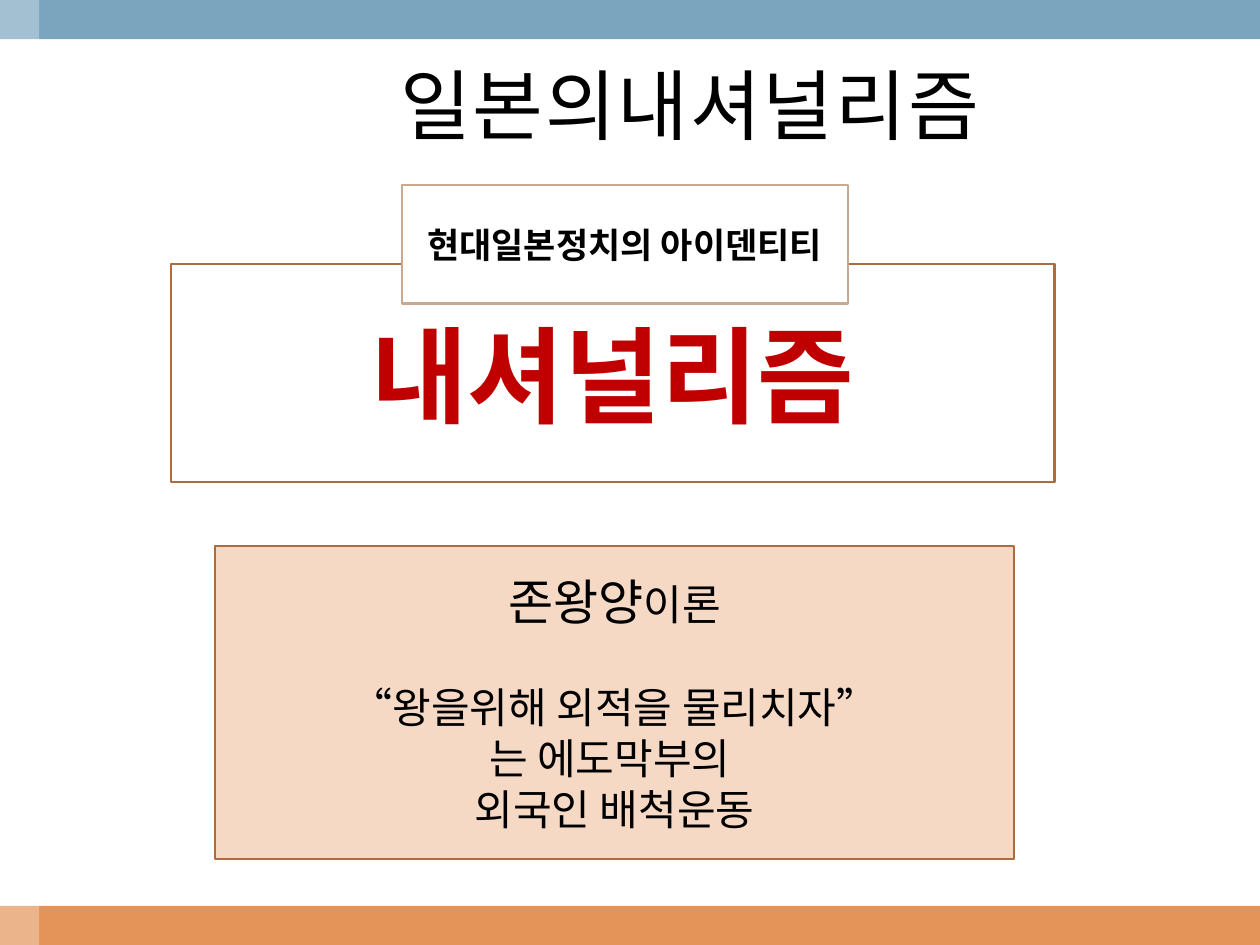
from dataclasses import dataclass
from lxml.etree import SubElement
from pptx import Presentation
from pptx.dml.color import RGBColor as Rgb
from pptx.enum.shapes import MSO_SHAPE as Kind
from pptx.enum.text import MSO_ANCHOR as Anchor, PP_ALIGN as Align
from pptx.oxml.ns import qn
from pptx.util import Cm, Pt


@dataclass(frozen=True)
class Theme:
    white: str = "FFFFFF"
    black: str = "000000"
    red: str = "C00000"
    blue: str = "7BA5BE"
    peach: str = "E49458"
    brown: str = "A96D41"
    tan: str = "C9AA91"
    serif: str = "Cambria"
    sans: str = "Arial"
    title: int = 44
    hero: int = 60
    label: int = 20
    lead: int = 28
    body: int = 24
    edge: float = 1.25


THEME = Theme()
WIDE, HIGH, BAND = 25.4, 19.05, 0.79


def put(item, style):
    for name, value in style.items():
        setattr(item, name, value)


def add_box(slide, area, fill, line=None, alpha=100):
    box = slide.shapes.add_shape(Kind.RECTANGLE, *map(Cm, area))
    box.shadow.inherit = False
    box.fill.solid()
    box.fill.fore_color.rgb = Rgb.from_string(fill)
    if alpha < 100:
        color = box.fill._xPr.find(".//" + qn("a:srgbClr"))
        SubElement(color, qn("a:alpha")).set("val", str(alpha * 1000))
    if line:
        box.line.color.rgb = Rgb.from_string(line)
        box.line.width = Pt(THEME.edge)
    else:
        box.line.fill.background()
    return box


def set_frame(box):
    put(box.text_frame, {"word_wrap": True, "vertical_anchor": Anchor.MIDDLE})
    return box.text_frame


def add_run(para, text, size, face=THEME.serif, color=THEME.black, bold=False):
    run = para.add_run()
    run.text = text
    put(run.font, {"size": Pt(size), "name": face, "bold": bold})
    run.font.color.rgb = Rgb.from_string(color)
    return run


def add_line(box, text, size, **style):
    para = set_frame(box).paragraphs[0]
    para.alignment = Align.CENTER
    return add_run(para, text, size, **style)


def add_lines(box, lines):
    frame = set_frame(box)
    for i, (runs, pitch, gap) in enumerate(lines):
        para = frame.add_paragraph() if i else frame.paragraphs[0]
        put(para, {"alignment": Align.CENTER, "line_spacing": Pt(pitch),
                   "space_before": Pt(gap)})
        for text, size in runs:
            add_run(para, text, size, face=THEME.sans)


def add_bands(slide):
    add_box(slide, (0, HIGH - BAND, WIDE, BAND), THEME.peach)
    add_box(slide, (0, 0, WIDE, BAND), THEME.blue)
    add_box(slide, (0, 0, BAND, HIGH), THEME.white, alpha=30)


def main():
    deck = Presentation()
    put(deck, {"slide_width": Cm(WIDE), "slide_height": Cm(HIGH)})
    slide = deck.slides.add_slide(deck.slide_layouts[6])
    add_bands(slide)

    title = slide.shapes.add_textbox(*map(Cm, (6.91, 0.79, 14, 2.62)))
    run = add_line(title, "일본의내셔널리즘", THEME.title)
    run.font._element.set("spc", "100")

    hero = add_box(slide, (3.45, 5.33, 17.81, 4.39), THEME.white, THEME.brown)
    add_line(hero, "내셔널리즘", THEME.hero, color=THEME.red, bold=True)

    label = add_box(slide, (8.1, 3.73, 8.99, 2.39), THEME.white, THEME.tan)
    add_line(label, "현대일본정치의 아이덴티티", THEME.label, bold=True)

    panel = add_box(slide, (4.34, 11, 16.1, 6.32), THEME.peach, THEME.brown, 35)
    add_lines(panel, [
        ([("존왕양", THEME.lead), ("이론", THEME.body)], 34, 0),
        ([("“왕을위해 외적을 물리치자”", THEME.body)], 29, 29),
        ([("는 에도막부의 ", THEME.body)], 29, 0),
        ([("외국인 배척운동", THEME.body)], 29, 0),
    ])
    deck.save("out.pptx")


if __name__ == "__main__":
    main()
